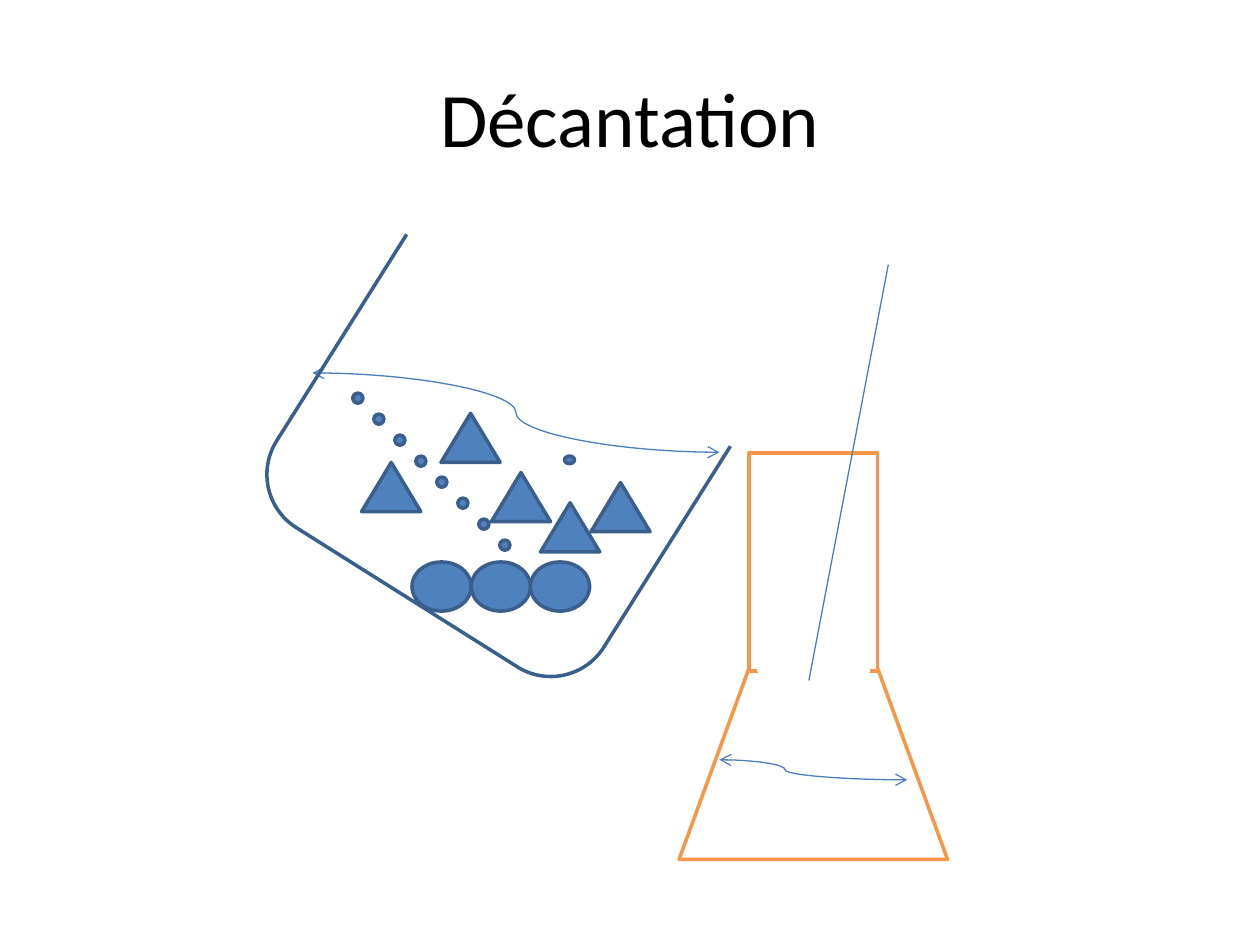
from lxml.etree import SubElement
from pptx import Presentation
from pptx.dml.color import RGBColor
from pptx.enum.shapes import MSO_CONNECTOR, MSO_SHAPE
from pptx.enum.text import MSO_ANCHOR, PP_ALIGN
from pptx.oxml.ns import qn
from pptx.util import Inches, Pt

COLORS = {"solid": "4F81BD", "outline": "3A5F8C", "liquid": "4B7EBC",
          "flask": "F79646", "paper": "FFFFFF", "title": "000000"}
TITLE = "Décantation"

GRAIN = (0.47, 0.39)
PEBBLE_START, PEBBLE_COUNT = (3.27, 4.46), 3
SAND_POSITIONS = [(2.87, 3.67), (3.5, 3.28), (3.9, 3.75), (4.29, 3.99), (4.69, 3.83)]
DOT = 0.08
DOT_START, DOT_COUNT, DOT_STEP = (2.8, 3.12), 8, 1 / 6
LONE_DOT = (4.48, 3.62, DOT, 0.06)

# shape, (left, top, width, height), rotation, fill, line
BEAKER = [
    (MSO_SHAPE.ROUND_2_SAME_RECTANGLE, (2.49, 1.98, 3.07, 2.99), 212.2, None, "outline"),
    (MSO_SHAPE.RECTANGLE, (3.01, 2.14, 3.54, 0.67), 33.2, "paper", None),
]
FLASK_BODY = [
    (MSO_SHAPE.FLOWCHART_EXTRACT, (5.39, 3.91, 2.13, 2.91), 0, "paper", "flask"),
    (MSO_SHAPE.RECTANGLE, (5.63, 3.83, 1.81, 0.25), 0, "paper", None),
]
FLASK_NECK = [
    (MSO_SHAPE.RECTANGLE, (5.59, 3.95, 1.73, 1.02), 270, "paper", "flask"),
    (MSO_SHAPE.RECTANGLE, (6.02, 5.25, 0.87, 0.08), 0, "paper", "paper"),
]

# start, end, position of the bend as a share of the width
BEAKER_LEVEL = ((2.48, 2.96), (5.71, 3.59), 0.5)
FLASK_LEVEL = ((5.71, 6.03), (7.2, 6.19), 0.35)
STIRRING_ROD = ((7.05, 2.1), (6.42, 5.4))


def color(name):
    return RGBColor.from_string(COLORS[name])


def add_part(slide, kind, frame, rotation=0, fill="solid", line="outline"):
    shape = slide.shapes.add_shape(kind, *map(Inches, frame))
    shape.shadow.inherit = False
    shape.rotation = rotation
    if fill:
        shape.fill.solid()
        shape.fill.fore_color.rgb = color(fill)
    else:
        shape.fill.background()
    if line:
        shape.line.color.rgb = color(line)
        shape.line.width = Pt(2)
    else:
        shape.line.fill.background()


def add_line(slide, kind, start, end):
    line = slide.shapes.add_connector(kind, *map(Inches, start + end))
    line.line.color.rgb = color("liquid")
    line.line.width = Pt(0.75)
    SubElement(line._element.spPr, qn("a:effectLst"))
    return line


def add_level(slide, start, end, bend):
    """Add a curved liquid surface with an arrowhead at both ends."""
    level = add_line(slide, MSO_CONNECTOR.CURVE, start, end)
    properties = level._element.spPr
    guides = properties.find(qn("a:prstGeom")).get_or_add_avLst()
    SubElement(guides, qn("a:gd"), name="adj1", fmla=f"val {round(bend * 100000)}")
    for tag in ("a:headEnd", "a:tailEnd"):
        SubElement(properties.find(qn("a:ln")), qn(tag), type="arrow")


def add_title(slide):
    box = slide.shapes.add_textbox(*map(Inches, (0.5, 0.3, 9, 1.25)))
    frame = box.text_frame
    frame.word_wrap = True
    frame.vertical_anchor = MSO_ANCHOR.MIDDLE
    para = frame.paragraphs[0]
    para.text = TITLE
    para.alignment = PP_ALIGN.CENTER
    para.font.name = "Calibri"
    para.font.size = Pt(44)
    para.font.color.rgb = color("title")


def add_grains(slide):
    left, top = PEBBLE_START
    for index in range(PEBBLE_COUNT):
        add_part(slide, MSO_SHAPE.OVAL, (left + index * GRAIN[0], top, *GRAIN))
    for position in SAND_POSITIONS:
        add_part(slide, MSO_SHAPE.ISOSCELES_TRIANGLE, position + GRAIN)
    left, top = DOT_START
    for index in range(DOT_COUNT):
        offset = index * DOT_STEP
        add_part(slide, MSO_SHAPE.OVAL, (left + offset, top + offset, DOT, DOT))
    add_part(slide, MSO_SHAPE.OVAL, LONE_DOT)


def main():
    deck = Presentation()
    deck.slide_width, deck.slide_height = Inches(10), Inches(7.5)
    slide = deck.slides.add_slide(deck.slide_layouts[6])
    add_title(slide)
    add_level(slide, *BEAKER_LEVEL)
    add_grains(slide)
    for part in BEAKER + FLASK_BODY:
        add_part(slide, *part)
    add_level(slide, *FLASK_LEVEL)
    for part in FLASK_NECK:
        add_part(slide, *part)
    add_line(slide, MSO_CONNECTOR.STRAIGHT, *STIRRING_ROD)
    deck.save("out.pptx")


if __name__ == "__main__":
    main()
